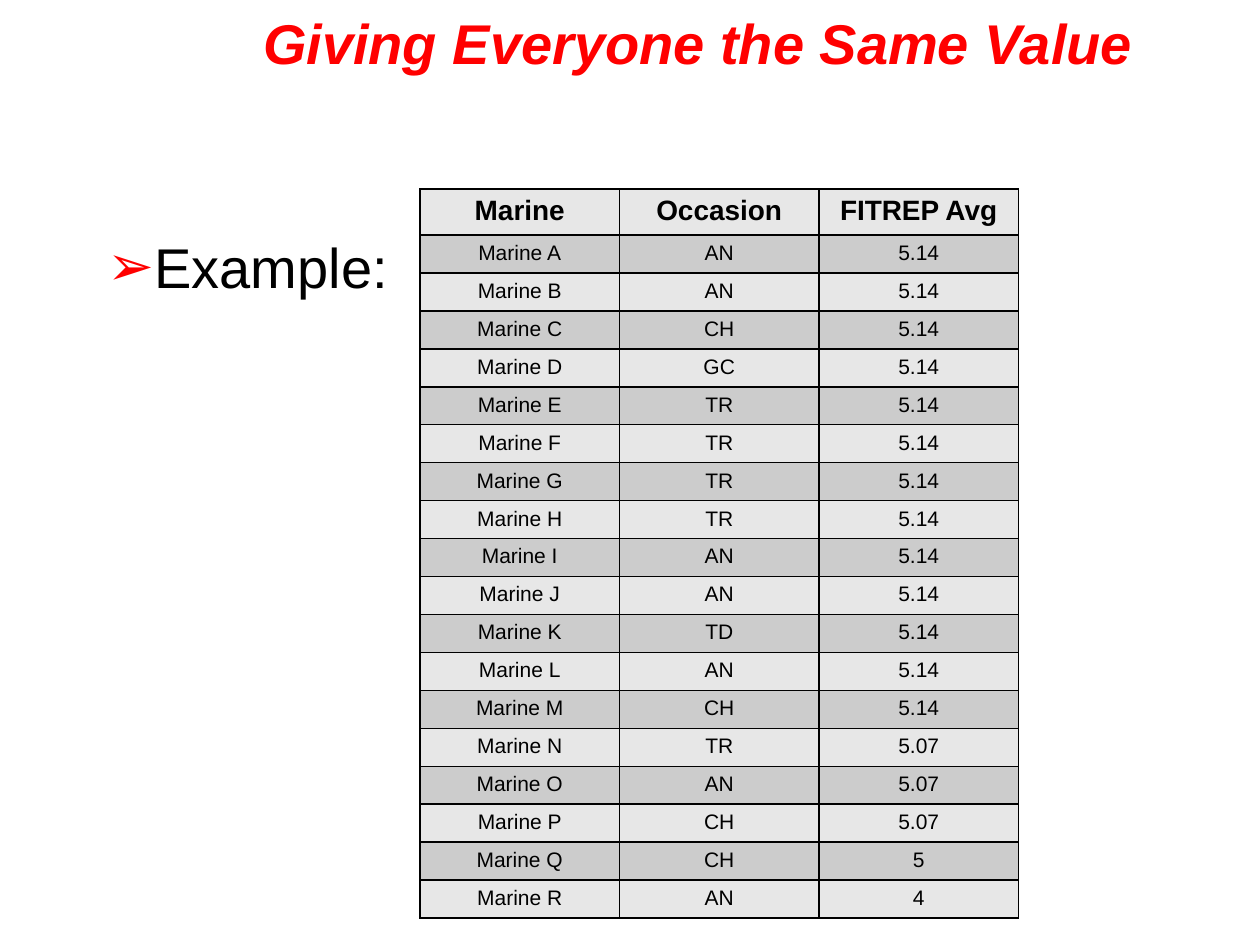
"""Build the slide on giving everyone the same value."""
from lxml.etree import SubElement as Sub
from pptx import Presentation as Deck
from pptx.dml.color import RGBColor as RGB
from pptx.enum.text import MSO_ANCHOR as Anchor, MSO_AUTO_SIZE as Auto, PP_ALIGN as Align
from pptx.oxml.ns import qn
from pptx.util import Pt

RED = RGB(0xFF, 0, 0)
BLACK = RGB(0, 0, 0)
LIGHT = RGB(0xE7, 0xE7, 0xE7)
GREY = RGB(0xCC, 0xCC, 0xCC)

HEAD = ("Marine", "Occasion", "FITREP Avg")
CODES = "AN AN CH GC TR TR TR TR AN AN TD AN CH TR AN CH CH AN".split()
MARKS = ["5.14"] * 13 + ["5.07"] * 3 + ["5", "4"]
NAMES = [f"Marine {c}" for c in "ABCDEFGHIJKLMNOPQR"]


class Page:
    def __init__(self, slide, face="Arial"):
        self.slide = slide
        self.face = face

    def add_text(self, para, text, size, color=BLACK, bold=False, slant=False):
        run = para.add_run()
        run.text = text
        font = run.font
        font.name, font.size = self.face, Pt(size)
        font.bold, font.italic = bold, slant
        font.color.rgb = color

    def place(self, shape, x, y, w, h):
        shape.left, shape.top = Pt(x), Pt(y)
        shape.width, shape.height = Pt(w), Pt(h)
        frame = shape.text_frame
        frame.auto_size, frame.word_wrap = Auto.NONE, True
        return frame

    def title(self, text, *box):
        frame = self.place(self.slide.shapes.title, *box)
        frame.vertical_anchor = Anchor.MIDDLE
        para = frame.paragraphs[0]
        para.alignment = Align.CENTER
        self.add_text(para, text, 32, RED, True, True)

    def bullet(self, text, *box):
        frame = self.place(self.slide.placeholders[1], *box)
        frame.margin_top = Pt(8)
        para = frame.paragraphs[0]
        props = para._p.get_or_add_pPr()
        props.set("marL", str(Pt(27)))
        props.set("indent", str(-Pt(27)))
        tint = Sub(props, qn("a:buClr"))
        Sub(tint, qn("a:srgbClr"), val=str(RED))
        Sub(props, qn("a:buFont"), typeface=self.face)
        Sub(props, qn("a:buChar"), char="➢")
        para.space_before = Pt(0)
        self.add_text(para, text, 32)

    def border(self, cell):
        props = cell._tc.get_or_add_tcPr()
        for side in ("lnL", "lnR", "lnT", "lnB"):
            line = Sub(props, qn(f"a:{side}"), w=str(Pt(1)))
            fill = Sub(line, qn("a:solidFill"))
            Sub(fill, qn("a:srgbClr"), val=str(BLACK))

    def table(self, rows, x, y, wide, top, high):
        cols = len(rows[0])
        full = top + high * (len(rows) - 1)
        grid = self.slide.shapes.add_table(
            len(rows), cols, Pt(x), Pt(y), Pt(wide * cols), Pt(full)).table
        grid.first_row = grid.horz_banding = False
        for col in grid.columns:
            col.width = Pt(wide)
        for i, row in enumerate(rows):
            grid.rows[i].height = Pt(high if i else top)
            for j, text in enumerate(row):
                cell = grid.cell(i, j)
                self.border(cell)
                cell.fill.solid()
                cell.fill.fore_color.rgb = GREY if i % 2 else LIGHT
                para = cell.text_frame.paragraphs[0]
                para.alignment = Align.CENTER
                self.add_text(para, text, 12 if i else 16, bold=not i)


def main():
    deck = Deck()
    deck.slide_width, deck.slide_height = Pt(720), Pt(540)
    page = Page(deck.slides.add_slide(deck.slide_layouts[1]))
    page.title("Giving Everyone the Same Value", 132, 3, 534, 42)
    page.bullet("Example:", 54, 125, 612, 354)
    rows = [HEAD, *zip(NAMES, CODES, MARKS)]
    page.table(rows, 240, 108, 114, 26.3, 21.7)
    deck.save("out.pptx")


if __name__ == "__main__":
    main()
